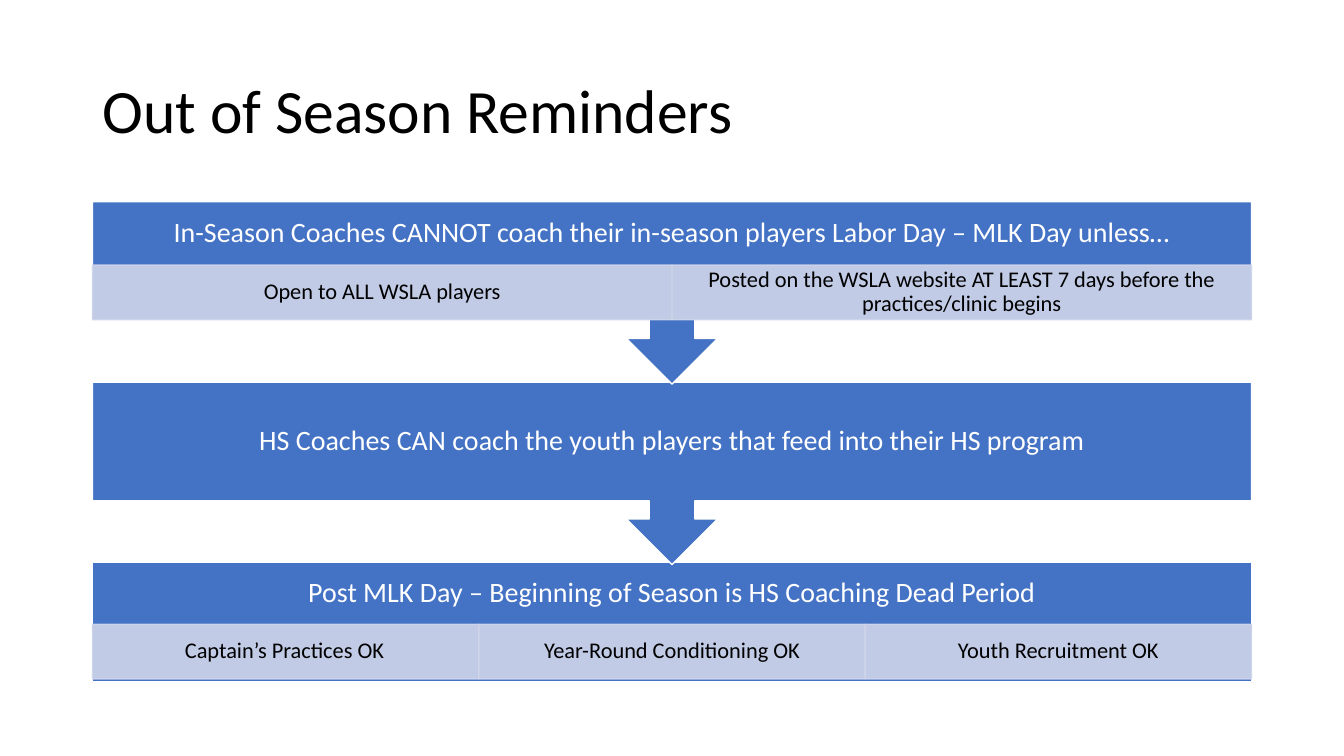
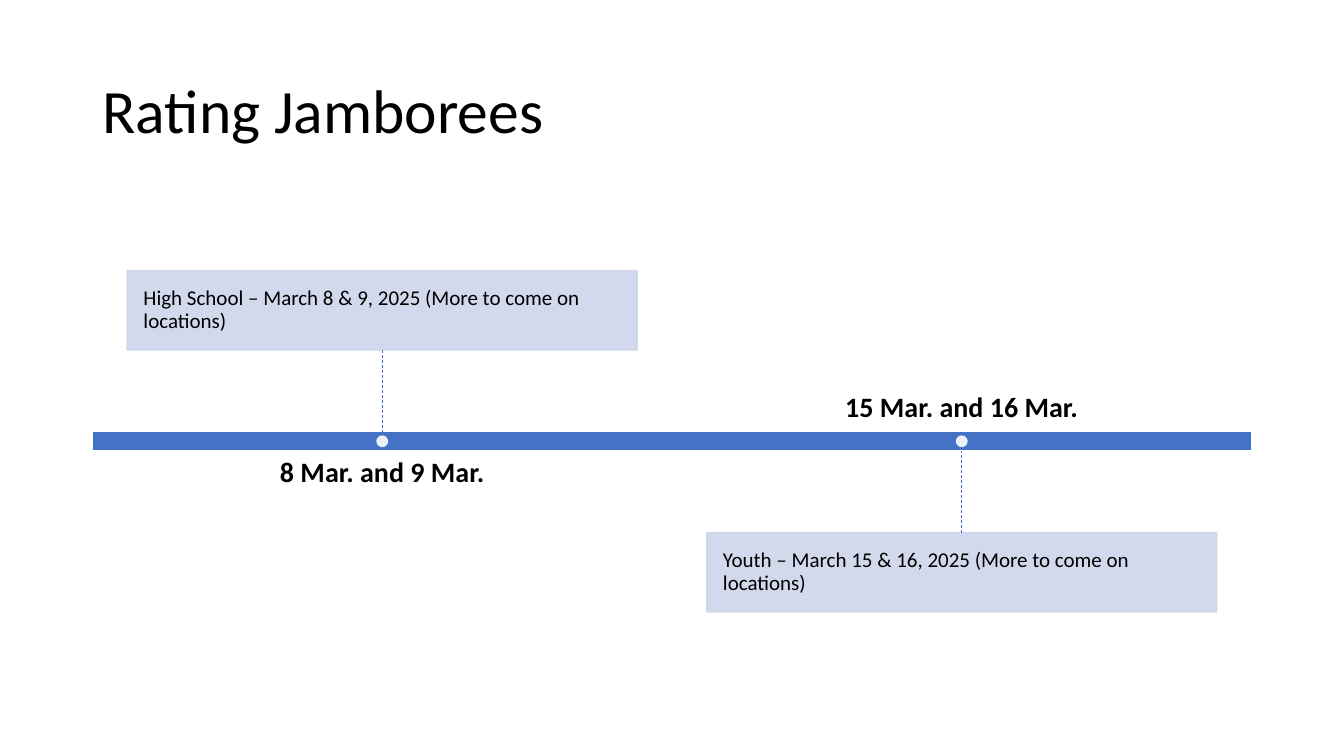
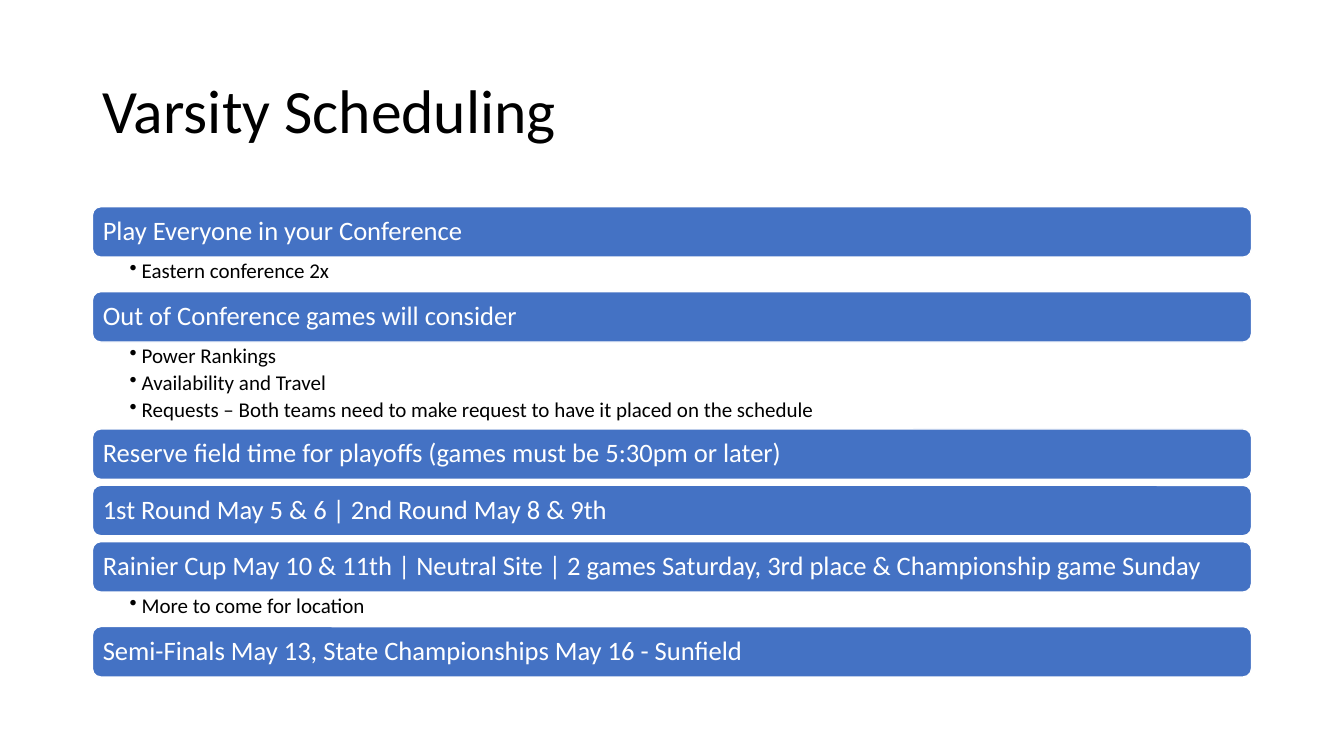
from dataclasses import dataclass

from lxml.etree import SubElement
from pptx import Presentation
from pptx.dml.color import RGBColor
from pptx.enum.dml import MSO_LINE
from pptx.enum.shapes import MSO_CONNECTOR, MSO_SHAPE
from pptx.enum.text import MSO_ANCHOR, MSO_AUTO_SIZE, PP_ALIGN
from pptx.oxml.ns import qn
from pptx.util import Cm, Pt

FONT = "Calibri"
BLUE, PALE, WHITE, BLACK = "4472C4", "CFD5EA", "FFFFFF", "000000"
TITLE_ONLY = 5
CALLOUT_BODY = 0.65  # share of a callout's height above its arrow


@dataclass
class Box:
    """A rectangle in centimetres."""
    left: float
    top: float
    width: float
    height: float

    def lengths(self):
        return [Cm(n) for n in (self.left, self.top, self.width, self.height)]


TITLE = Box(2.33, 1.02, 29.21, 3.68)
CONTENT = Box(2.33, 5.08, 29.21, 12.1)


def rgb(colour):
    return RGBColor.from_string(colour)


def write(shape, text, size, colour=BLACK, align=PP_ALIGN.LEFT,
          anchor=MSO_ANCHOR.MIDDLE, insets=(0, 0, 0, 0), bold=False,
          bulleted=False):
    """Fill a shape with text; insets are left, top, right, bottom in cm."""
    frame = shape.text_frame
    frame.text = text
    frame.word_wrap = True
    frame.auto_size = MSO_AUTO_SIZE.NONE
    frame.vertical_anchor = anchor
    (frame.margin_left, frame.margin_top,
     frame.margin_right, frame.margin_bottom) = [Cm(n) for n in insets]
    for para in frame.paragraphs:
        if bulleted:
            add_bullet(para)
        para.alignment = align
        para.line_spacing = 0.9
        for span in para.runs:
            span.font.name = FONT
            span.font.size = Pt(size)
            span.font.bold = bold
            span.font.color.rgb = rgb(colour)


def add_bullet(para):
    para.level = 1
    para.space_after = Pt(3)
    properties = para._p.get_or_add_pPr()
    properties.set("marL", str(Cm(0.3)))
    properties.set("indent", str(Cm(-0.3)))
    SubElement(properties, qn("a:buChar"), char="•")


def add_block(page, kind, box, fill, line=None, opacity=100):
    block = page.shapes.add_shape(kind, *box.lengths())
    block.shadow.inherit = False
    block.fill.solid()
    block.fill.fore_color.rgb = rgb(fill)
    if line:
        block.line.color.rgb = rgb(line)
        block.line.width = Pt(1)
    else:
        block.line.fill.background()
    if opacity < 100:
        for colour in list(block.element.spPr.iter(qn("a:srgbClr"))):
            SubElement(colour, qn("a:alpha"), val=str(opacity * 1000))
    return block


def add_page(deck, title):
    page = deck.slides.add_slide(deck.slide_layouts[TITLE_ONLY])
    heading = page.shapes.title
    heading.left, heading.top, heading.width, heading.height = TITLE.lengths()
    write(heading, title, 44, insets=(0.25, 0.13, 0.25, 0.13))
    return page


def add_step(page, kind, box, header, text, details):
    """A blue panel whose details share a pale strip below its header."""
    is_callout = kind == MSO_SHAPE.DOWN_ARROW_CALLOUT
    body = box.height * CALLOUT_BODY if is_callout else box.height
    panel = add_block(page, kind, box, BLUE, WHITE)
    below = body - header if details else 0
    write(panel, text, 20, WHITE, PP_ALIGN.CENTER,
          insets=(0.41, 0.41, 0.41, 0.41 + below))
    for index, detail in enumerate(details):
        width = box.width / len(details)
        cell = add_block(page, MSO_SHAPE.RECTANGLE,
                         Box(box.left + index * width, box.top + header,
                             width, 1.38), PALE, PALE, 90)
        write(cell, detail, 16, align=PP_ALIGN.CENTER,
              insets=(0.3, 0.05, 0.3, 0.05))


def build_reminders(deck, box):
    page = add_page(deck, "Out of Season Reminders")
    callout = MSO_SHAPE.DOWN_ARROW_CALLOUT
    steps = [
        (callout, 4.6, 1.6,
         "In-Season Coaches CANNOT coach their in-season players "
         "Labor Day – MLK Day unless…",
         ["Open to ALL WSLA players",
          "Posted on the WSLA website AT LEAST 7 days before the "
          "practices/clinic begins"]),
        (callout, 4.6, 1.6,
         "HS Coaches CAN coach the youth players that feed into their "
         "HS program", []),
        (MSO_SHAPE.RECTANGLE, 3, 1.55,
         "Post MLK Day – Beginning of Season is HS Coaching Dead Period",
         ["Captain’s Practices OK\t", "Year-Round Conditioning OK",
          "Youth Recruitment OK"]),
    ]
    # Bottom step first, so that each arrow tip lies over the next panel.
    for index, (kind, height, header, text, details) in reversed(
            list(enumerate(steps))):
        add_step(page, kind,
                 Box(box.left, box.top + 4.55 * index, box.width, height),
                 header, text, details)


def add_milestone(page, bar, centre, above, date, text):
    """A card on one side of the bar, its date on the other, and a dot."""
    stem, gap = 2.06, 0.2
    card_width, card_height = 0.44 * bar.width, 2
    date_width, date_height = 0.4 * bar.width, 1.37
    bar_end = bar.top + bar.height
    if above:
        edge, card_top = bar.top, bar.top - stem - card_height
        date_top, date_anchor, side = bar_end + gap, MSO_ANCHOR.TOP, 2
    else:
        edge, card_top = bar_end, bar_end + stem
        date_top, date_anchor, side = (bar.top - gap - date_height,
                                       MSO_ANCHOR.BOTTOM, 0)

    label = page.shapes.add_textbox(*Box(
        centre - date_width / 2, date_top, date_width, date_height).lengths())
    write(label, date, 20, align=PP_ALIGN.CENTER, anchor=date_anchor,
          bold=True)
    card = add_block(page, MSO_SHAPE.RECTANGLE,
                     Box(centre - card_width / 2, card_top,
                         card_width, card_height), PALE, PALE, 90)
    write(card, text, 15, insets=(0.41,) * 4)

    link = page.shapes.add_connector(MSO_CONNECTOR.STRAIGHT, Cm(centre),
                                     Cm(edge), Cm(centre), Cm(edge))
    link.begin_connect(card, side)
    link.line.color.rgb = rgb(BLUE)
    link.line.width = Pt(0.5)
    link.line.dash_style = MSO_LINE.DASH
    SubElement(link.element.spPr, qn("a:effectLst"))

    dot = 0.3
    add_block(page, MSO_SHAPE.OVAL,
              Box(centre - dot / 2, bar.top + (bar.height - dot) / 2,
                  dot, dot), WHITE, opacity=90)


def build_jamborees(deck, box):
    page = add_page(deck, "Rating Jamborees")
    bar = Box(box.left, box.top + 5.8, box.width, 0.48)
    add_block(page, MSO_SHAPE.RECTANGLE, bar, BLUE, WHITE)
    milestones = [
        (0.25, True, "8 Mar. and 9 Mar.",
         "High School – March 8 & 9, 2025 (More to come on locations)"),
        (0.75, False, "15 Mar. and 16 Mar.",
         "Youth – March 15 & 16, 2025 (More to come on locations)"),
    ]
    for share, above, date, text in milestones:
        add_milestone(page, bar, bar.left + share * bar.width, above,
                      date, text)


def build_scheduling(deck, box):
    page = add_page(deck, "Varsity Scheduling")
    topics = [
        ("Play Everyone in your Conference", ["Eastern conference 2x"]),
        ("Out of Conference games will consider",
         ["Power Rankings", "Availability and Travel",
          "Requests – Both teams need to make request to have it placed "
          "on the schedule"]),
        ("Reserve field time for playoffs (games must be 5:30pm or later)",
         []),
        ("1st Round May 5 & 6 | 2nd Round May 8 & 9th", []),
        ("Rainier Cup May 10 & 11th | Neutral Site | 2 games Saturday, "
         "3rd place & Championship game Sunday",
         ["More to come for location"]),
        ("Semi-Finals May 13, State Championships May 16 - Sunfield", []),
    ]
    bar_height, gap = 1.27, 0.15
    top = box.top + 0.13
    for topic, notes in topics:
        bar = add_block(page, MSO_SHAPE.ROUNDED_RECTANGLE,
                        Box(box.left, top, box.width, bar_height),
                        BLUE, WHITE)
        write(bar, topic, 19, WHITE, insets=(0.2,) * 4)
        top += bar_height
        if notes:
            height = 0.21 + 0.66 * len(notes)
            listing = page.shapes.add_textbox(
                *Box(box.left, top, box.width, height).lengths())
            write(listing, "\n".join(notes), 15, anchor=MSO_ANCHOR.TOP,
                  insets=(0.94, 0.08, 0.38, 0.08), bulleted=True)
            top += height
        else:
            top += gap


def main():
    deck = Presentation()
    deck.slide_width, deck.slide_height = Cm(33.87), Cm(19.05)
    for build in (build_reminders, build_jamborees, build_scheduling):
        build(deck, CONTENT)
    deck.save("out.pptx")


if __name__ == "__main__":
    main()
